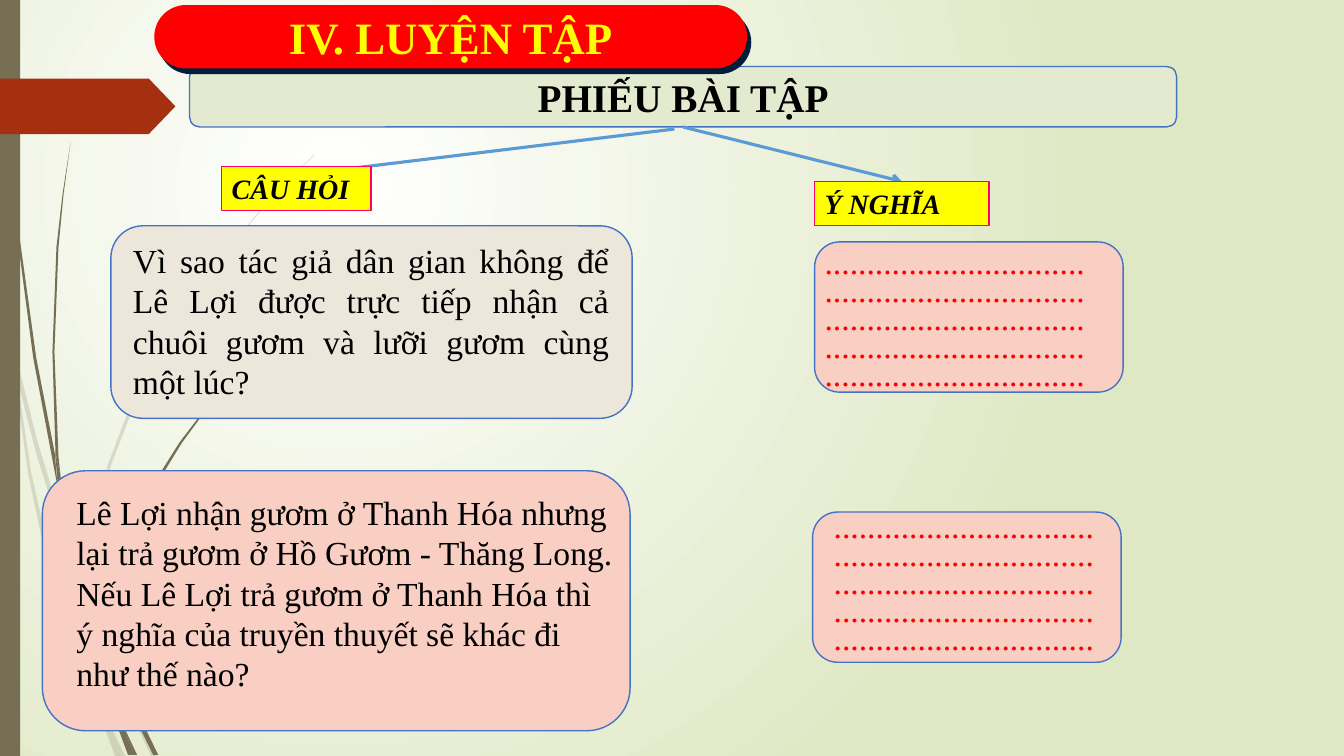
from lxml import etree
from pptx import Presentation
from pptx.dml.color import RGBColor
from pptx.enum import shapes as sh, text as tx
from pptx.oxml import parse_xml
from pptx.oxml.ns import qn
from pptx.util import Inches, Pt

FONT = "Times New Roman"
NS = 'xmlns:a="http://schemas.openxmlformats.org/drawingml/2006/main"'
OLIVE, BLUE, SKY, PINK = "766F54", "4472C4", "5B9BD5", "F9CFC3"
DOTS = "." * 155

PALE = [
    [(0.11, 3.5), (0.09, 3.22), (0, 2.82), (0, 2.99), (0.1, 3.44)],
    [(0.58, 5.22), (0.84, 5.99), (0.85, 5.86), (0.62, 5.2), (0.36, 4.34),
     (0.14, 3.45), (0.17, 3.76), (0.36, 4.5)],
    [(0.92, 6.07), (0.88, 5.96), (0.88, 6.1), (1.23, 6.94), (1.5, 7.5),
     (1.55, 7.5), (1.27, 6.92)],
    [(1.19, 7.5), (1.24, 7.5), (1.05, 7.11)],
    [(0.93, 6.83), (0.7, 6.19), (0.48, 5.45), (0.31, 4.69), (0.17, 3.76),
     (0.11, 3.5), (0.28, 4.7), (0.44, 5.46), (0.65, 6.21), (0.92, 6.93),
     (1.01, 7.14), (0.99, 7.07)],
    [(0.88, 5.84), (0.95, 5.22), (1.1, 4.62), (1.32, 4.05), (1.6, 3.49),
     (1.93, 2.95), (2.29, 2.45), (2.68, 1.98), (2.9, 1.75), (3.12, 1.54),
     (3.12, 1.53), (2.89, 1.75), (2.68, 1.97), (2.28, 2.44), (1.91, 2.94),
     (1.58, 3.48), (1.29, 4.03), (1.07, 4.61), (0.91, 5.22), (0.85, 5.84),
     (0.85, 5.86), (0.88, 5.96)],
    [(1.01, 7.14), (1.14, 7.5), (1.19, 7.5)],
    [(0.96, 6.92), (0.93, 6.83), (0.99, 7.07), (1.01, 7.14), (1.19, 7.5),
     (1.05, 7.11)],
]
DARK = [
    [(0.07, 1.1), (0.17, 2.33), (0.33, 3.55), (0.56, 4.77), (0.57, 4.81),
     (0.55, 4.57), (0.55, 4.53), (0.36, 3.55), (0.19, 2.32), (0.08, 1.09),
     (0.05, 0.48), (0.04, 0), (0.03, 0), (0.04, 0.48)],
    [(1.13, 6.49), (1.1, 6.41), (1.11, 6.56), (1.32, 7.08), (1.52, 7.49),
     (1.57, 7.49), (1.36, 7.06)],
    [(0.6, 4.72), (0.58, 4.53), (0.54, 3.49), (0.58, 2.45), (0.63, 1.93),
     (0.7, 1.41), (0.62, 1.93), (0.56, 2.45), (0.52, 3.49), (0.55, 4.49)],
    [(1.33, 7.49), (1.36, 7.49), (1.22, 7.19)],
    [(0.57, 4.77), (0.64, 5.05), (0.6, 4.72), (0.55, 4.49), (0.55, 4.53)],
    [(1.11, 6.33), (1.15, 5.92), (1.25, 5.52), (1.4, 5.13), (1.58, 4.76),
     (1.8, 4.4), (2.05, 4.06), (2.31, 3.74), (2.45, 3.59), (2.61, 3.44),
     (2.6, 3.44), (2.45, 3.58), (2.31, 3.73), (2.04, 4.05), (1.78, 4.39),
     (1.56, 4.74), (1.37, 5.12), (1.22, 5.51), (1.11, 5.91), (1.06, 6.31),
     (1.1, 6.41)],
    [(1.17, 7.22), (1.27, 7.49), (1.31, 7.49)],
    [(1.16, 7.06), (1.1, 6.91), (1.16, 7.17), (1.17, 7.22), (1.3, 7.49),
     (1.33, 7.49), (1.22, 7.19)],
]

HEAD = ("PHIẾU BÀI TẬP", (1.88, 0.66, 9.79, 0.6))
LABELS = [("CÂU HỎI", (2.2, 1.65, 1.48, 0.44)),
          ("Ý NGHĨA", (8.08, 1.8, 1.73, 0.44))]
CARDS = [
    ((1.1, 2.24, 5.17, 1.91), "EDE6DB", (1.22, 2.33, 4.92, 1.72), "000000", True,
     "Vì sao tác giả dân gian không để Lê Lợi được trực tiếp nhận cả chuôi gươm "
     "và lưỡi gươm cùng một lúc?"),
    ((0.42, 4.67, 5.83, 2.58), PINK, (0.66, 4.83, 5.53, 2.52), "000000", False,
     "Lê Lợi nhận gươm ở Thanh Hóa nhưng lại trả gươm ở Hồ Gươm - Thăng Long. "
     "Nếu Lê Lợi trả gươm ở Thanh Hóa thì ý nghĩa của truyền thuyết sẽ khác đi "
     "như thế nào?"),
    ((8.06, 5.08, 3.06, 1.49), PINK, (8.17, 5.08, 2.85, 1.51), "FF0000", True, DOTS),
    ((8.08, 2.4, 3.06, 1.49), PINK, (8.08, 2.46, 2.85, 1.51), "FF0000", True, DOTS),
]
TITLE = ("IV. LUYỆN TẬP", (1.53, 0.05, 5.88, 0.63))

deck = Presentation()
deck.slide_width, deck.slide_height = Inches(13.33), Inches(7.5)
slide = deck.slides.add_slide(deck.slide_layouts[5])
tree = slide.shapes


def rgb(code):
    return RGBColor.from_string(code)


def paint(shape, fill, line=None, width=1):
    shape.shadow.inherit = False
    shape.fill.solid()
    shape.fill.fore_color.rgb = rgb(fill)
    if line:
        shape.line.color.rgb = rgb(line)
        shape.line.width = Pt(width)
    else:
        shape.line.fill.background()
    return shape


def block(kind, box, fill, line=None, width=1):
    shape = tree.add_shape(kind, *map(Inches, box))
    return paint(shape, fill, line, width)


def write(shape, words, size, color, align, anchor, bold=False, slant=False):
    frame = shape.text_frame
    frame.text = words
    frame.word_wrap = True
    frame.vertical_anchor = anchor
    para = frame.paragraphs[0]
    para.alignment = align
    font = para.runs[0].font
    font.name, font.size, font.bold, font.italic = FONT, Pt(size), bold, slant
    font.color.rgb = rgb(color)
    return para


def wisp(points, alpha):
    spots = [(round(x * 100), round(y * 100)) for x, y in points]
    pen = tree.build_freeform(*spots[0], scale=Inches(0.01))
    pen.add_line_segments(spots[1:], close=True)
    shape = paint(pen.convert_to_shape(), OLIVE)
    if alpha < 100:
        tint = shape.fill._xPr.find(".//" + qn("a:srgbClr"))
        etree.SubElement(tint, qn("a:alpha"), val=str(alpha * 1000))


def arrow(start, end):
    line = tree.add_connector(sh.MSO_CONNECTOR.STRAIGHT, *map(Inches, start + end))
    line.line.color.rgb = rgb(SKY)
    line.line.width = Pt(2.25)
    etree.SubElement(line.line._get_or_add_ln(), qn("a:tailEnd"), type="arrow")
    etree.SubElement(line._element.spPr, qn("a:effectLst"))
    return line


def backdrop():
    fill = slide.background.fill
    fill.gradient()
    for stop, (place, code) in zip(fill.gradient_stops, [(0, "FFFFFF"), (1, "DFE8C4")]):
        stop.position = place
        stop.color.rgb = rgb(code)
    lin = fill._xPr.find(".//" + qn("a:lin"))
    lin.getparent().replace(lin, parse_xml(
        f'<a:path {NS} path="circle"><a:fillToRect l="50000" t="50000" '
        'r="100000" b="100000"/></a:path>'))


def banner(words, box):
    pill = block(kinds.ROUNDED_RECTANGLE, box, "FF0000")
    pill.adjustments[0] = 0.5
    glow = pill._element.spPr.find(qn("a:effectLst"))
    glow.append(parse_xml(
        f'<a:outerShdw {NS} dist="63500" dir="3180000" algn="ctr" rotWithShape="0">'
        '<a:srgbClr val="001D3A"/></a:outerShdw>'))
    title = tree.title
    title.left, title.top, title.width, title.height = map(Inches, box)
    write(title, words, 32, "FFFF00", mid, center, bold=True)
    tree._spTree.append(title._element)


kinds = sh.MSO_SHAPE
left, mid, full = tx.PP_ALIGN.LEFT, tx.PP_ALIGN.CENTER, tx.PP_ALIGN.JUSTIFY
top, center = tx.MSO_ANCHOR.TOP, tx.MSO_ANCHOR.MIDDLE

backdrop()
for group, alpha in ((PALE, 20), (DARK, 100)):
    for points in group:
        wisp(points, alpha)
block(kinds.RECTANGLE, (0, 0, 0.2, 7.5), OLIVE)
flag = block(kinds.PENTAGON, (0, 0.78, 1.74, 0.55), "A53010")
flag.adjustments[0] = 0.48

head = block(kinds.ROUNDED_RECTANGLE, HEAD[1], "E3EACF", BLUE)
write(head, HEAD[0], 28, "000000", mid, center, bold=True)
link = arrow((6.77, 1.26), (8.95, 1.8))
arrow((6.69, 1.28), (2.91, 1.74))
for words, box in LABELS:
    label = block(kinds.RECTANGLE, box, "FFFF00", "FF0066", 0.75)
    write(label, words, 20, "000000", left, top, bold=True, slant=True)
link.begin_connect(head, 2)
link.end_connect(label, 0)

for box, fill, area, color, even, words in CARDS:
    block(kinds.ROUNDED_RECTANGLE, box, fill, BLUE)
    note = tree.add_textbox(*map(Inches, area))
    para = write(note, words, 24, color, full if even else left, top)
    if words == DOTS:
        para.line_spacing = Pt(20)
banner(*TITLE)

deck.save("out.pptx")
